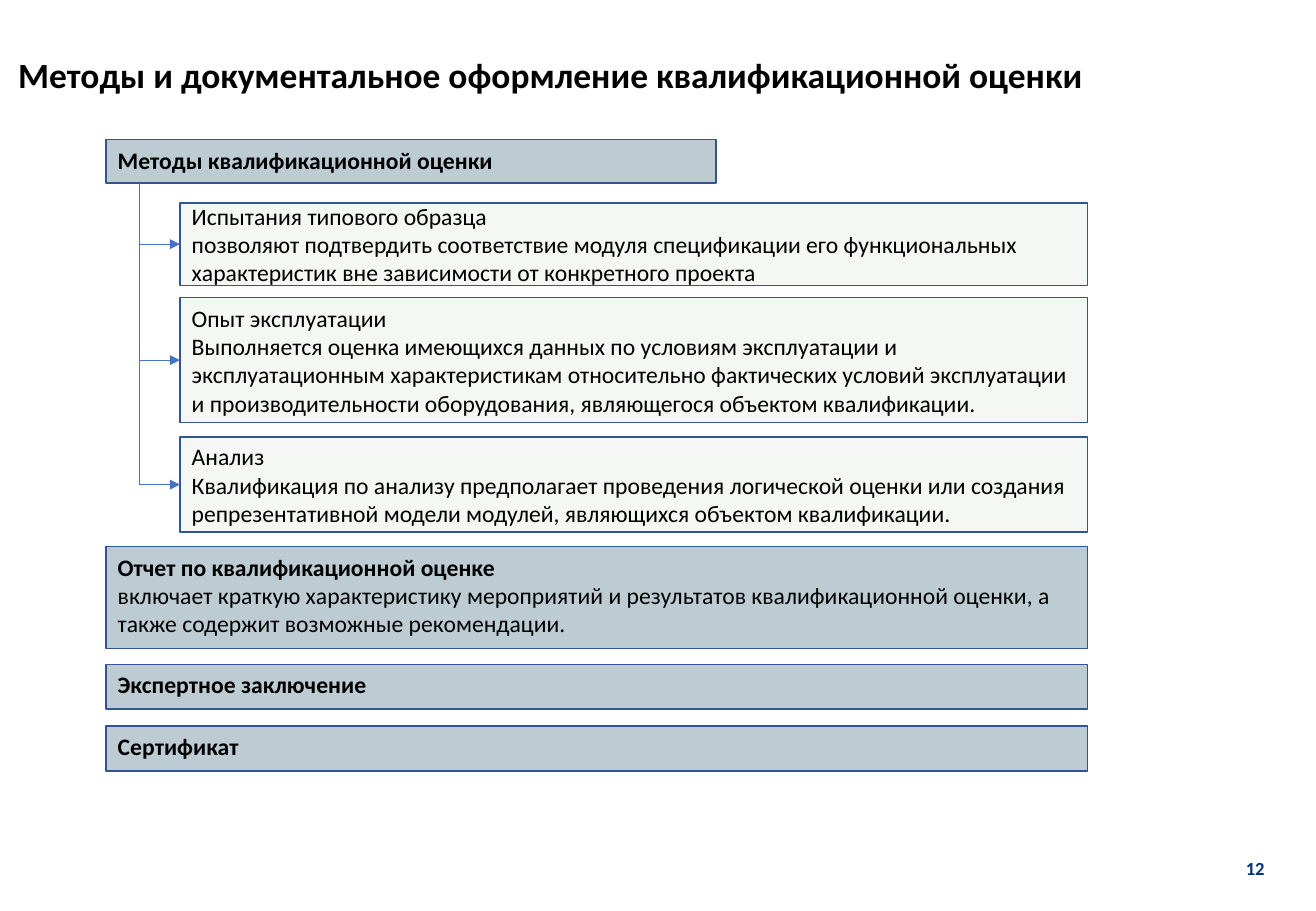
"""Build the slide on methods and documents of qualification assessment."""
from dataclasses import dataclass

from lxml import etree
from pptx import Presentation
from pptx.dml.color import RGBColor
from pptx.enum.shapes import MSO_CONNECTOR, MSO_SHAPE
from pptx.enum.text import MSO_ANCHOR, MSO_AUTO_SIZE, PP_ALIGN
from pptx.oxml.ns import qn
from pptx.util import Inches, Pt

RECTANGLE, STRAIGHT = MSO_SHAPE.RECTANGLE, MSO_CONNECTOR.STRAIGHT
TOP, MIDDLE = MSO_ANCHOR.TOP, MSO_ANCHOR.MIDDLE
LEFT, CENTER = PP_ALIGN.LEFT, PP_ALIGN.CENTER
NO_AUTOFIT = MSO_AUTO_SIZE.NONE


@dataclass(frozen=True)
class Theme:
    font: str = "Calibri"
    title_size: int = 21
    body_size: int = 14
    number_size: int = 11
    text: str = "000000"
    number: str = "003274"
    section_fill: str = "BCCCD2"
    method_fill: str = "F4F7F3"
    border: str = "325491"
    connector: str = "4472C4"


THEME = Theme()


def write(shape, lines, size, color, frame_format, para_format):
    """Fill a shape with (text, bold) lines, one paragraph each."""
    frame = shape.text_frame
    for name, value in frame_format.items():
        setattr(frame, name, value)
    for index, (text, bold) in enumerate(lines):
        para = frame.add_paragraph() if index else frame.paragraphs[0]
        for name, value in para_format.items():
            setattr(para, name, value)
        span = para.add_run()
        span.text = text
        for name, value in {"name": THEME.font, "size": Pt(size), "bold": bold}.items():
            setattr(span.font, name, value)
        span.font.color.rgb = RGBColor.from_string(color)


def connect(page, start, end, arrow):
    """Draw a thin line between two points, with an arrowhead if asked."""
    line = page.shapes.add_connector(STRAIGHT, *map(Inches, start + end))
    line.line.color.rgb = RGBColor.from_string(THEME.connector)
    line.line.width = Pt(0.5)
    if arrow:
        etree.SubElement(line.line._get_or_add_ln(), qn("a:tailEnd"), type="triangle")
    etree.SubElement(line._element.spPr, qn("a:effectLst"))


deck = Presentation()
deck.slide_width, deck.slide_height = Inches(10.83), Inches(7.5)
page = deck.slides.add_slide(deck.slide_layouts[5])

title = page.shapes.title
title_place = {"left": 0.15, "top": 0.48, "width": 9.65, "height": 0.33}
for name, value in title_place.items():
    setattr(title, name, Inches(value))
no_margins = dict.fromkeys(
    ["margin_left", "margin_top", "margin_right", "margin_bottom"], 0)
write(title, [("Методы и документальное оформление квалификационной оценки", True)],
      THEME.title_size, THEME.text,
      {"auto_size": NO_AUTOFIT, "word_wrap": True, "vertical_anchor": TOP, **no_margins},
      {"alignment": LEFT, "line_spacing": 0.9})

number = page.shapes.add_textbox(Inches(10.11), Inches(6.86), Inches(0.44), Inches(0.58))
write(number, [("12", True)], THEME.number_size, THEME.number,
      {"word_wrap": False, "vertical_anchor": MIDDLE}, {"alignment": CENTER})

SECTION_LEFT, METHOD_LEFT, RIGHT = 0.87, 1.48, 8.95
sections = [
    (1.15, 5.02, 0.36, [("Методы квалификационной оценки", True)]),
    (4.5, RIGHT - SECTION_LEFT, 0.84, [
        ("Отчет по квалификационной оценке", True),
        ("включает краткую характеристику мероприятий и результатов "
         "квалификационной оценки, а также содержит возможные рекомендации.", False)]),
    (5.47, RIGHT - SECTION_LEFT, 0.37, [("Экспертное заключение", True)]),
    (5.98, RIGHT - SECTION_LEFT, 0.37, [("Сертификат", True)]),
]
methods = [
    (1.67, 0.68, "Испытания типового образца",
     "позволяют подтвердить соответствие модуля спецификации его функциональных "
     "характеристик вне зависимости от конкретного проекта"),
    (2.45, 1.03, "Опыт эксплуатации",
     "Выполняется оценка имеющихся данных по условиям эксплуатации и "
     "эксплуатационным характеристикам относительно фактических условий эксплуатации "
     "и производительности оборудования, являющегося объектом квалификации."),
    (3.6, 0.78, "Анализ",
     "Квалификация по анализу предполагает проведения логической оценки или создания "
     "репрезентативной модели модулей, являющихся объектом квалификации."),
]
boxes = [(SECTION_LEFT, top, width, height, THEME.section_fill, TOP, lines)
         for top, width, height, lines in sections]
boxes += [(METHOD_LEFT, top, RIGHT - METHOD_LEFT, height, THEME.method_fill, MIDDLE,
           [(heading, False), (detail, False)])
          for top, height, heading, detail in methods]

for left, top, width, height, fill, anchor, lines in boxes:
    box = page.shapes.add_shape(RECTANGLE, *map(Inches, (left, top, width, height)))
    box.shadow.inherit = False
    box.fill.solid()
    box.fill.fore_color.rgb = RGBColor.from_string(fill)
    box.line.color.rgb = RGBColor.from_string(THEME.border)
    box.line.width = Pt(1)
    write(box, lines, THEME.body_size, THEME.text,
          {"word_wrap": True, "vertical_anchor": anchor}, {"alignment": LEFT})

TRUNK = 1.15
arrow_heights = [top + height / 2 for top, height, heading, detail in methods]
connect(page, (TRUNK, 1.51), (TRUNK, arrow_heights[-1]), False)
for arrow_height in arrow_heights:
    connect(page, (TRUNK, arrow_height), (METHOD_LEFT, arrow_height), True)

deck.save("out.pptx")
